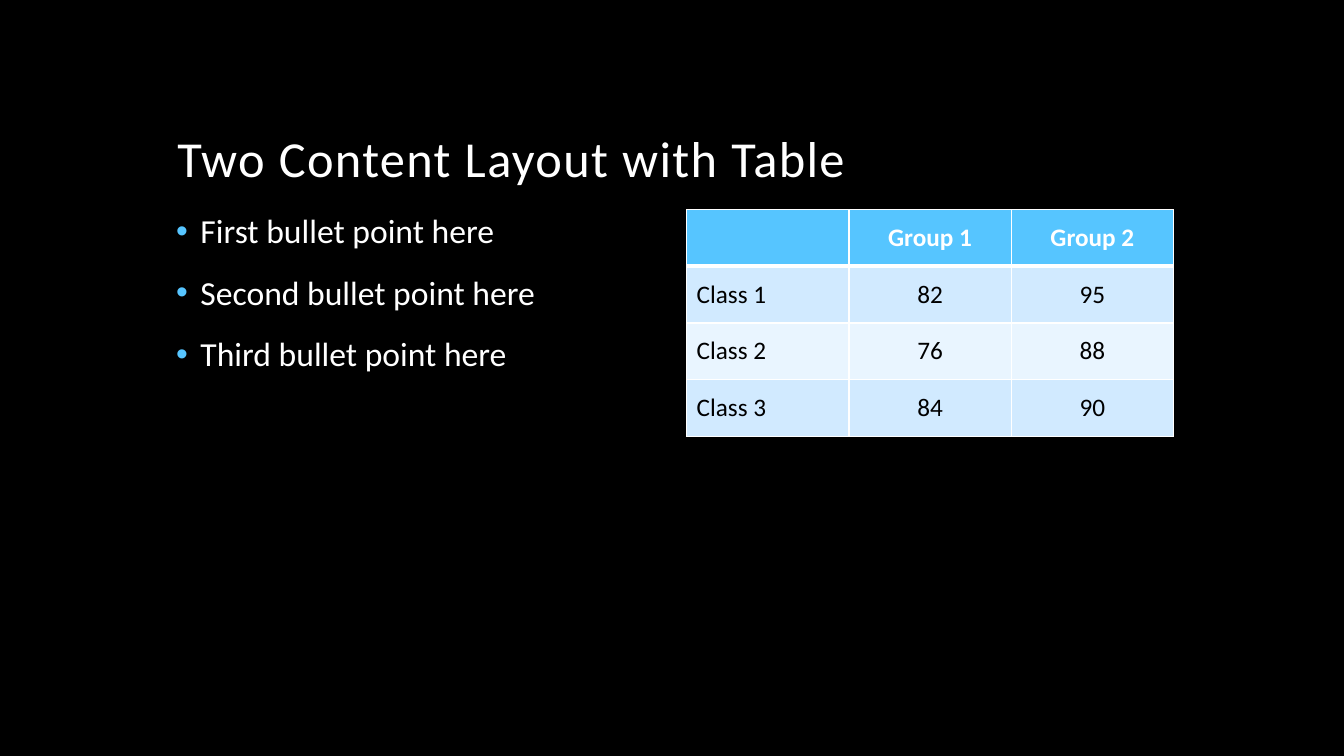
from lxml.etree import SubElement
from pptx import Presentation
from pptx.dml.color import RGBColor
from pptx.enum.text import MSO_ANCHOR as Anchor, PP_ALIGN as Align
from pptx.oxml import parse_xml
from pptx.oxml.ns import nsdecls, qn
from pptx.util import Inches, Pt

TITLE = "Two Content Layout with Table"
BULLETS = [
    "First bullet point here",
    "Second bullet point here",
    "Third bullet point here",
]
SCORES = [
    ("", "Group 1", "Group 2"),
    ("Class 1", "82", "95"),
    ("Class 2", "76", "88"),
    ("Class 3", "84", "90"),
]
COLORS = {
    "background": "000000",
    "light": "FFFFFF",
    "dark": "000000",
    "accent": "56C5FF",
    "odd": "D1EAFF",
    "even": "E9F5FF",
}
FONT = "Calibri"
WIDTH, HEIGHT = 13.33, 7.5
LEFT, TOP = 1.65, 2.08
COLUMN, GAP = 4.83, 0.33
TABLE_HEIGHT = HEIGHT * 0.3


def color(name):
    return RGBColor.from_string(COLORS[name])


def style(para, size, name, bold=False):
    for span in para.runs:
        span.font.name = FONT
        span.font.size = Pt(size)
        span.font.bold = bold
        span.font.color.rgb = color(name)


def add_bullet(para):
    props = para._p.get_or_add_pPr()
    props.set("marL", str(Inches(0.24)))
    props.set("indent", str(-Inches(0.24)))
    tint = SubElement(props, qn("a:buClr"))
    SubElement(tint, qn("a:srgbClr")).set("val", COLORS["accent"])
    SubElement(props, qn("a:buFont")).set("typeface", "Arial")
    SubElement(props, qn("a:buChar")).set("char", "•")


def add_borders(cell, widths):
    props = cell._tc.get_or_add_tcPr()
    for index, (side, width) in enumerate(widths.items()):
        props.insert(index, parse_xml(
            f'<a:ln{side} {nsdecls("a")} w="{Pt(width)}"><a:solidFill>'
            f'<a:srgbClr val="{COLORS["light"]}"/></a:solidFill></a:ln{side}>'))


def add_title(page):
    title = page.shapes.title
    title.left, title.top = Inches(1.66), Inches(0.42)
    title.width, title.height = Inches(10), Inches(1.5)
    frame = title.text_frame
    frame.text = TITLE
    frame.word_wrap = True
    frame.vertical_anchor = Anchor.BOTTOM
    para = frame.paragraphs[0]
    para.alignment = Align.LEFT
    para.line_spacing = 0.9
    style(para, 36, "light")
    para.runs[0].font._element.set("spc", "100")


def add_bullets(page):
    box = page.shapes.add_textbox(Inches(LEFT), Inches(TOP), Inches(COLUMN), Inches(HEIGHT * 0.6))
    frame = box.text_frame
    frame.word_wrap = True
    frame.text = "\n".join(BULLETS)
    for index, para in enumerate(frame.paragraphs):
        add_bullet(para)
        para.line_spacing = 0.9
        para.space_before = Pt(18 if index else 0)
        style(para, 24, "light")


def add_scores(page):
    table = page.shapes.add_table(
        len(SCORES), len(SCORES[0]), Inches(LEFT + COLUMN + GAP), Inches(TOP),
        Inches(COLUMN), Inches(TABLE_HEIGHT)).table
    for r, row in enumerate(SCORES):
        header = r == 0
        fill = "accent" if header else "odd" if r % 2 else "even"
        borders = {"L": 1, "R": 1, "T": 3 if r == 1 else 1, "B": 3 if header else 1}
        for c, value in enumerate(row):
            cell = table.cell(r, c)
            cell.text = value
            cell.vertical_anchor = Anchor.MIDDLE
            cell.fill.solid()
            cell.fill.fore_color.rgb = color(fill)
            add_borders(cell, borders)
            para = cell.text_frame.paragraphs[0]
            para.alignment = Align.CENTER if c else Align.LEFT
            style(para, 18, "light" if header else "dark", header)


def main():
    deck = Presentation()
    deck.slide_width, deck.slide_height = Inches(WIDTH), Inches(HEIGHT)
    page = deck.slides.add_slide(deck.slide_layouts.get_by_name("Title Only"))
    page.background.fill.solid()
    page.background.fill.fore_color.rgb = color("background")
    add_title(page)
    add_bullets(page)
    add_scores(page)
    deck.save("out.pptx")


if __name__ == "__main__":
    main()
